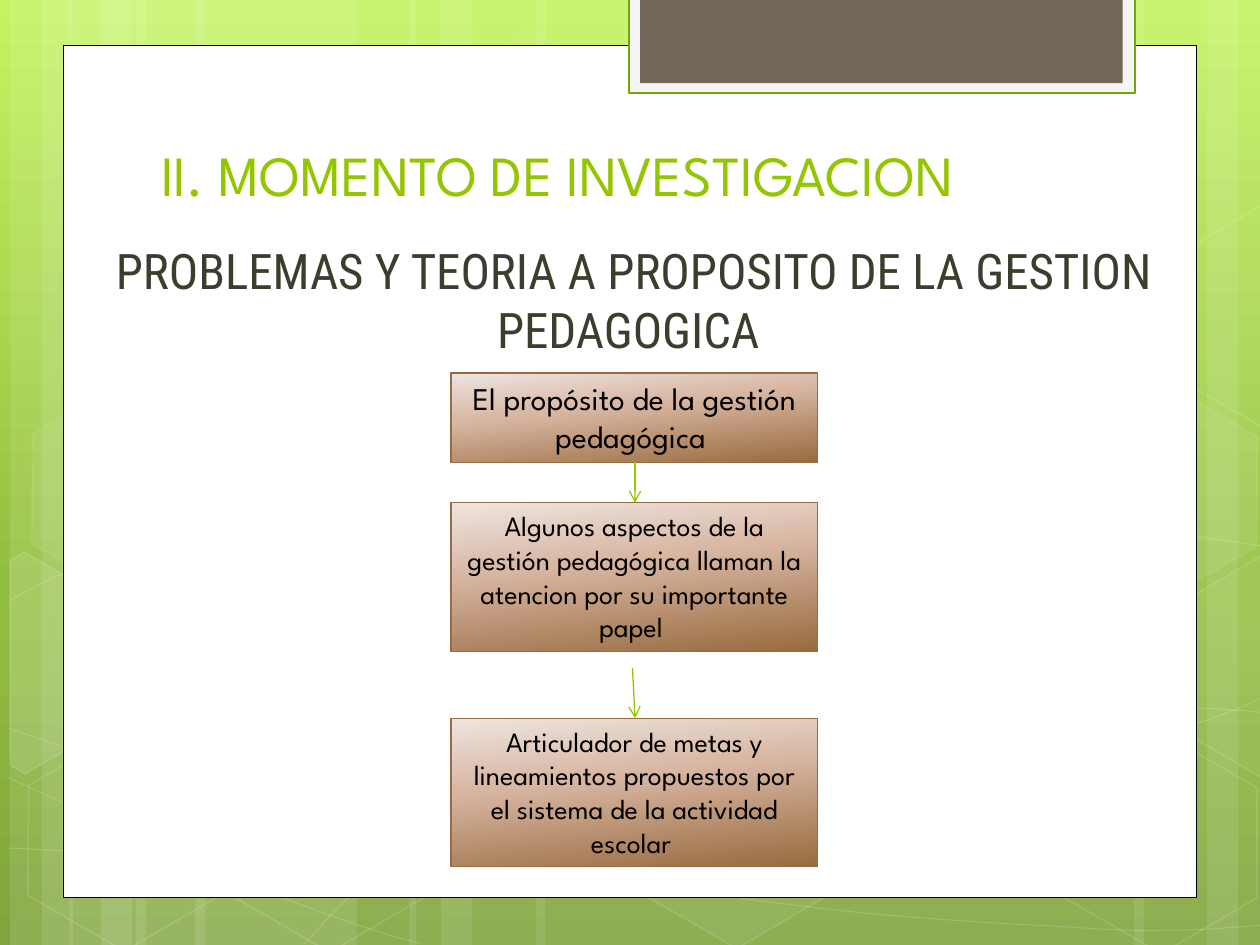
from math import cos, radians, sin

from lxml.etree import SubElement
from pptx import Presentation
from pptx.dml.color import RGBColor
from pptx.enum.shapes import MSO_CONNECTOR, MSO_SHAPE
from pptx.enum.text import MSO_ANCHOR, PP_ALIGN
from pptx.oxml.ns import qn
from pptx.util import Inches, Pt

COLORS = {
    "white": "FFFFFF", "black": "000000", "green": "94C600", "tab_line": "74A510",
    "tab": "F5F5F5", "tab_inner": "71685A", "subtitle": "3E3D2D", "box_line": "956B43",
}
BACKDROP = [(0, "C3F35F"), (62, "93BF3F"), (100, "81A53E")]
BOX_FILL = [(0, "EEE5E0"), (40, "D8B6A2"), (100, "996B3F")]
HEAD_FONT, BODY_FONT = "League Spartan", "Roboto Condensed"
TILT = 30

TITLE = "II. MOMENTO DE INVESTIGACION"
SUBTITLE = "PROBLEMAS Y TEORIA A PROPOSITO DE LA GESTION PEDAGOGICA "
BOXES = [
    ("El propósito de la gestión pedagógica ", 2.96, 0.71, 18),
    ("Algunos aspectos de la gestión pedagógica llaman la atencion por su importante papel ", 3.99, 1.18, 16),
    ("Articulador de metas y lineamientos propuestos por el sistema de la actividad escolar ", 5.7, 1.18, 16),
]
ARROWS = [(5.04, 3.67, 5.04, 3.99), (5.02, 5.3, 5.04, 5.7)]

STRIPES = [(1.08, 1.75), (0.08, 0.5), (0.33, 0.83), (1.55, 1.75), (0.55, 0.5), (0.8, 0.83),
           (7.33, 1.75), (9.58, 0.5), (9, 0.83), (4.25, 3.08), (3.25, 0.5), (3.5, 0.83)]
CURVES = [
    [[(0.07, 6.73), (0.61, 6.76), (1.15, 6.79), (1.9, 6.78), (2.65, 6.77), (3.58, 6.75), (4.58, 6.65),
      (5.58, 6.55), (7, 6.36), (7.92, 6.17), (8.83, 5.98), (9.77, 5.68), (10.07, 5.51)]],
    [[(0.07, 4.77), (0.36, 4.61), (0.65, 4.46), (1.21, 4.31), (1.78, 4.16), (2.59, 3.94), (3.47, 3.87),
      (4.36, 3.8), (5.44, 3.79), (6.54, 3.87), (7.64, 3.95), (9.47, 4.26), (10.07, 4.34)]],
    [[(0.06, 6.17), (1.27, 6.72), (2.47, 7.27), (3.34, 7.49)]],
    [[(0.07, 5.78), (0.38, 5.89), (0.7, 6), (1.28, 6.16), (1.86, 6.31), (2.73, 6.56), (3.57, 6.73),
      (4.4, 6.9), (5.45, 7.08), (6.28, 7.18), (7.11, 7.29), (8, 7.33), (8.53, 7.36),
      (9.05, 7.4), (9.19, 7.38), (9.45, 7.38), (9.71, 7.37), (9.89, 7.35), (10.07, 7.34)]],
    [[(2.42, 7.49), (2.6, 7.29), (2.78, 7.09), (3.02, 6.91), (3.26, 6.73), (3.6, 6.53), (3.88, 6.39),
      (4.16, 6.25), (4.33, 6.19), (4.7, 6.09), (5.06, 5.99), (5.73, 5.85), (6.08, 5.78),
      (6.44, 5.71), (6.49, 5.71), (6.8, 5.69), (7.11, 5.66), (7.6, 5.63), (7.94, 5.62),
      (8.29, 5.61), (8.86, 5.62), (8.86, 5.62)],
     [(9.53, 5.62), (9.71, 5.63), (9.88, 5.64), (9.97, 5.65), (10.06, 5.66), (10.03, 5.65), (10.06, 5.66)]],
]
HEXAGONS = [(3.34, 0.36, 4, 8), (4.97, 5.89, 6, 12), (0.11, 5.91, 0, 12), (0.14, 3.12, 7, 8),
            (1.74, 5.92, 0, 12), (7.53, 4.53, 10, 12), (8.34, 5.93, 0, 12), (8.34, 3.14, 7, 8)]
CUT_HEXAGONS = [
    ((0.36, 5.35), [(0.08, 4.45), (0.19, 4.38), (0.96, 4.82), (0.95, 5.7), (0.2, 6.14), (0.08, 6.07)], 10),
    ((9.85, 5.2), [(9.26, 4.85), (10.01, 4.41), (10.09, 4.46), (10.09, 6.13), (10.02, 6.17), (9.26, 5.73)], 4),
    ((9.85, 2.41), [(9.26, 2.07), (10.01, 1.63), (10.1, 1.68), (10.09, 3.35), (10.02, 3.39), (9.26, 2.95)], 0),
]


def set_color(fill, holder, color, alpha=100):
    fill.solid()
    fill.fore_color.rgb = RGBColor.from_string(COLORS[color])
    if alpha < 100:
        clr = holder.find(qn("a:solidFill")).find(qn("a:srgbClr"))
        SubElement(clr, qn("a:alpha"), val=str(alpha * 1000))


def set_gradient(fill, holder, stops, angle):
    fill.gradient()
    grad = next(holder.iter(qn("a:gradFill")))
    stop_list = grad.find(qn("a:gsLst"))
    for gs in list(stop_list):
        stop_list.remove(gs)
    for pos, color in stops:
        gs = SubElement(stop_list, qn("a:gs"), pos=str(pos * 1000))
        SubElement(gs, qn("a:srgbClr"), val=color)
    grad.find(qn("a:lin")).set("ang", str(angle * 60000))


def style(sp, fill=None, fill_alpha=100, line=None, width=1, line_alpha=100):
    sp.shadow.inherit = False
    if fill and fill_alpha:
        set_color(sp.fill, sp.element.spPr, fill, fill_alpha)
    else:
        sp.fill.background()
    if line:
        sp.line.width = Pt(width)
        set_color(sp.line.fill, sp.element.spPr.find(qn("a:ln")), line, line_alpha)
    else:
        sp.line.fill.background()


def add_preset(slide, kind, x, y, w, h, **look):
    sp = slide.shapes.add_shape(kind, Inches(x), Inches(y), Inches(w), Inches(h))
    style(sp, **look)
    return sp


def add_outline(slide, points, close, **look):
    start, *rest = [(Inches(x), Inches(y)) for x, y in points]
    builder = slide.shapes.build_freeform(*start)
    builder.add_line_segments(rest, close=close)
    sp = builder.convert_to_shape()
    style(sp, **look)
    return sp


def add_curve(slide, chunks, **look):
    sp = add_outline(slide, [pt for chunk in chunks for pt in chunk], False, **look)
    outline = next(sp.element.iter(qn("a:path")))
    nodes = iter(list(outline))
    for chunk in chunks:
        next(nodes)
        for _ in range(len(chunk) // 3):
            first, second, third = next(nodes), next(nodes), next(nodes)
            bezier = SubElement(outline, qn("a:cubicBezTo"))
            outline.replace(first, bezier)
            bezier.extend([first[0], second[0], third[0]])
            outline.remove(second)
            outline.remove(third)


def untilt(point, center):
    dx, dy = point[0] - center[0], point[1] - center[1]
    c, s = cos(radians(TILT)), sin(radians(TILT))
    return center[0] + dx * c + dy * s, center[1] - dx * s + dy * c


def write(sp, text, size, font, color, align, anchor=MSO_ANCHOR.TOP):
    tf = sp.text_frame
    tf.word_wrap = True
    tf.vertical_anchor = anchor
    tf.text = text
    p = tf.paragraphs[0]
    p.alignment = align
    r = p.runs[0]
    r.font.size = Pt(size)
    r.font.name = font
    r.font.color.rgb = RGBColor.from_string(COLORS[color])


def add_text(slide, x, y, w, h, *text_format):
    sp = slide.shapes.add_textbox(Inches(x), Inches(y), Inches(w), Inches(h))
    write(sp, *text_format)


def add_arrow(slide, *ends):
    sp = slide.shapes.add_connector(MSO_CONNECTOR.STRAIGHT, *map(Inches, ends))
    sp.line.width = Pt(0.75)
    sp.line.color.rgb = RGBColor.from_string(COLORS["green"])
    SubElement(sp.element.spPr.find(qn("a:ln")), qn("a:tailEnd"), type="arrow")
    SubElement(sp.element.spPr, qn("a:effectLst"))


def draw_backdrop(slide):
    set_gradient(slide.background.fill, slide.element, BACKDROP, 90)
    for x, w in STRIPES:
        add_preset(slide, MSO_SHAPE.RECTANGLE, x, 0, w, 7.5, fill="white", fill_alpha=10)
    for chunks in CURVES:
        add_curve(slide, chunks, line="white", width=0.5, line_alpha=20)
    for x, y, fill_alpha, line_alpha in HEXAGONS:
        sp = add_preset(slide, MSO_SHAPE.HEXAGON, x, y, 1.75, 1.52, fill="white",
                        fill_alpha=fill_alpha, line="white", line_alpha=line_alpha)
        sp.adjustments[0] = 0.285
        sp.rotation = TILT
    for center, points, fill_alpha in CUT_HEXAGONS:
        sp = add_outline(slide, [untilt(pt, center) for pt in points], True, fill="white",
                         fill_alpha=fill_alpha, line="white", line_alpha=12)
        sp.rotation = TILT
    add_preset(slide, MSO_SHAPE.RECTANGLE, 0.5, 0.36, 9, 6.76, fill="white", line="black", width=0.5)
    add_preset(slide, MSO_SHAPE.RECTANGLE, 4.99, -0.02, 4.02, 0.76, fill="tab", line="tab_line", width=1.25)
    add_preset(slide, MSO_SHAPE.RECTANGLE, 5.08, -0.02, 3.83, 0.68, fill="tab_inner")


def main():
    prs = Presentation()
    prs.slide_width, prs.slide_height = Inches(10), Inches(7.5)
    slide = prs.slides.add_slide(prs.slide_layouts[6])
    draw_backdrop(slide)
    add_text(slide, 1.18, 0.84, 7.68, 0.86, TITLE, 32.4, HEAD_FONT, "green", PP_ALIGN.LEFT, MSO_ANCHOR.BOTTOM)
    add_text(slide, 0.53, 1.86, 9, 0.66, SUBTITLE, 28, BODY_FONT, "subtitle", PP_ALIGN.CENTER)
    for text, y, h, size in BOXES:
        sp = add_preset(slide, MSO_SHAPE.RECTANGLE, 3.58, y, 2.91, h, line="box_line", width=0.75)
        set_gradient(sp.fill, sp.element.spPr, BOX_FILL, 84)
        write(sp, text, size, HEAD_FONT, "black", PP_ALIGN.CENTER)
    for ends in ARROWS:
        add_arrow(slide, *ends)
    prs.save("out.pptx")


if __name__ == "__main__":
    main()
